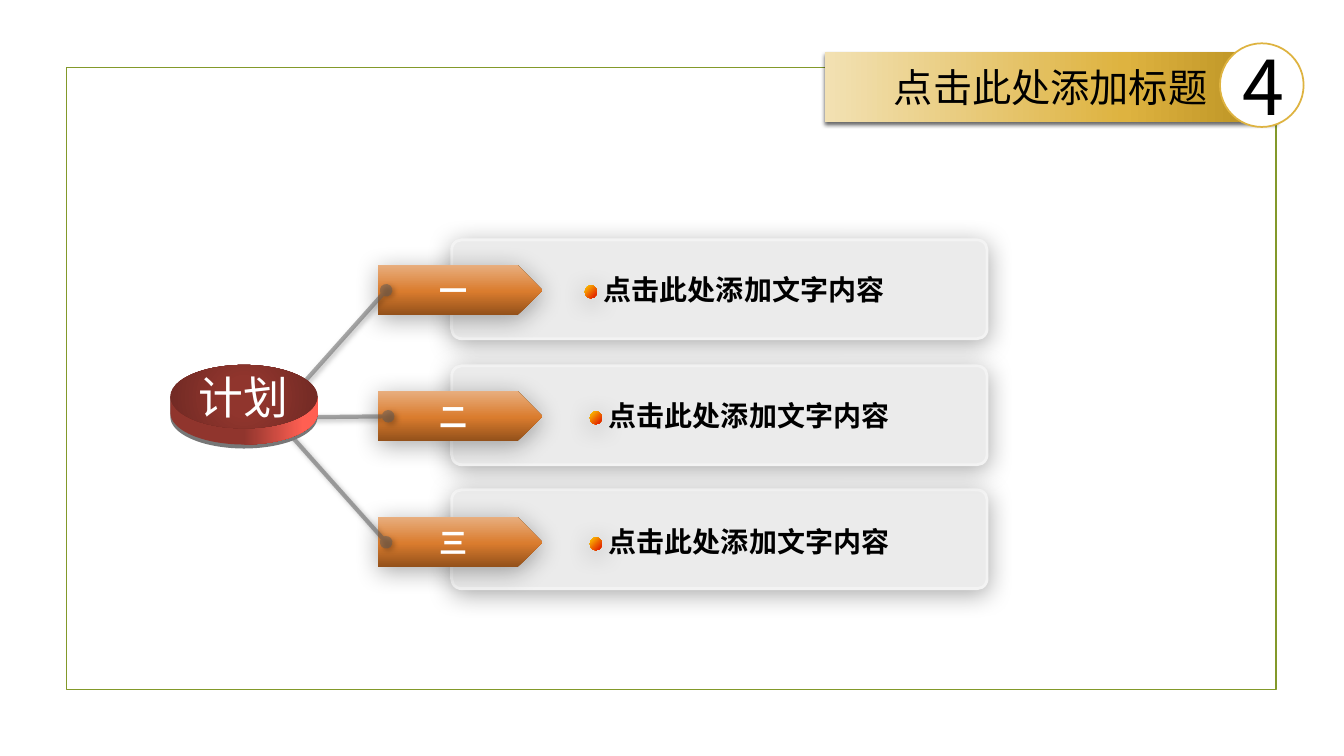
from math import cos, pi, sin

from lxml import etree
from pptx import Presentation
from pptx.dml.color import RGBColor
from pptx.enum.shapes import MSO_CONNECTOR, MSO_SHAPE
from pptx.enum.text import MSO_ANCHOR, PP_ALIGN
from pptx.oxml.ns import qn
from pptx.util import Inches, Pt

RECTANGLE = MSO_SHAPE.RECTANGLE
ROUNDED = MSO_SHAPE.ROUNDED_RECTANGLE
PENTAGON = MSO_SHAPE.PENTAGON
OVAL = MSO_SHAPE.OVAL
STRAIGHT = MSO_CONNECTOR.STRAIGHT
MIDDLE = MSO_ANCHOR.MIDDLE
TOP = MSO_ANCHOR.TOP
LEFT = PP_ALIGN.LEFT
CENTER = PP_ALIGN.CENTER

BLACK = RGBColor(0x00, 0x00, 0x00)
WHITE = RGBColor(0xFF, 0xFF, 0xFF)
OLIVE = RGBColor(0x83, 0x99, 0x2A)
GOLD = RGBColor(0xDE, 0xB3, 0x40)
DARK_GOLD = RGBColor(0xB7, 0x8E, 0x20)
PALE_GOLD = RGBColor(0xF2, 0xE1, 0xB3)
BROWN = RGBColor(0x92, 0x50, 0x1A)
ORANGE = RGBColor(0xDA, 0x7C, 0x2E)
PEACH = RGBColor(0xE8, 0xAE, 0x7E)
YELLOW = RGBColor(0xFF, 0xCF, 0x01)
RED = RGBColor(0xE2, 0x20, 0x00)
MAROON = RGBColor(0x90, 0x35, 0x2D)
DARK_MAROON = RGBColor(0x71, 0x2A, 0x24)
CORAL = RGBColor(0xFF, 0x5F, 0x52)
CARD_GRAY = RGBColor(0xEB, 0xEB, 0xEB)
EDGE_GRAY = RGBColor(0xF3, 0xF3, 0xF3)
LINE_GRAY = RGBColor(0x59, 0x59, 0x59)
BASE_GRAY = RGBColor(0x77, 0x77, 0x77)

FONT = "Noto Sans CJK SC"
NUMBER_FONT = "Noto Sans CJK JP"
SOFT_SHADOW = (33, 17.8, 3, 87)
LINE_SHADOW = (50, 4, 2, 45)
BAR_SHADOW = (60, 3, 2, 90)
TAG_GRADIENT = ([(0, BROWN), (48, ORANGE), (100, PEACH)], 270)
DOT_GRADIENT = ([(0, YELLOW), (90, RED)], 45)
BAR_GRADIENT = ([(0, DARK_GOLD), (34, GOLD), (100, PALE_GOLD)], 180)
SIDE_GRADIENT = ([(0, MAROON), (50, MAROON), (90, CORAL)], 0)
LID_GRADIENT = ([(0, MAROON), (23, MAROON), (97, DARK_MAROON)], None)


def add_child(parent, tag, **attributes):
    """Append a drawing element and return it."""
    child = etree.SubElement(parent, qn(tag))
    for name, value in attributes.items():
        child.set(name, str(value))
    return child


def add_shadow(properties, opacity, blur, distance, angle):
    """Put an outer black shadow into shape properties."""
    effects = properties.find(qn("a:effectLst"))
    if effects is None:
        effects = add_child(properties, "a:effectLst")
    shadow = add_child(effects, "a:outerShdw", blurRad=Pt(blur), dist=Pt(distance),
                       dir=angle * 60000, algn="ctr", rotWithShape=0)
    color = add_child(shadow, "a:srgbClr", val=BLACK)
    add_child(color, "a:alpha", val=opacity * 1000)


def fill_gradient(shape, stops, angle):
    """Fill with colour stops, linear at an angle or radial without one."""
    shape.fill.gradient()
    gradient = shape._element.spPr.find(qn("a:gradFill"))
    for child in list(gradient):
        gradient.remove(child)
    stop_list = add_child(gradient, "a:gsLst")
    for position, color in stops:
        stop = add_child(stop_list, "a:gs", pos=position * 1000)
        add_child(stop, "a:srgbClr", val=color)
    if angle is None:
        path = add_child(gradient, "a:path", path="circle")
        add_child(path, "a:fillToRect", l=50000, t=50000, r=50000, b=50000)
    else:
        add_child(gradient, "a:lin", ang=angle * 60000, scaled=0)


def style_shape(shape, fill=None, gradient=None, line=None, line_width=1.25, shadow=None):
    """Set fill, outline and shadow of a shape."""
    shape.shadow.inherit = False
    if gradient:
        fill_gradient(shape, *gradient)
    elif fill is not None:
        shape.fill.solid()
        shape.fill.fore_color.rgb = fill
    else:
        shape.fill.background()
    if line is None:
        shape.line.fill.background()
    else:
        shape.line.color.rgb = line
        shape.line.width = Pt(line_width)
    if shadow:
        add_shadow(shape._element.spPr, *shadow)


def add_box(slide, kind, left, top, width, height, **style):
    """Add a styled preset shape."""
    shape = slide.shapes.add_shape(kind, Inches(left), Inches(top), Inches(width), Inches(height))
    style_shape(shape, **style)
    return shape


def write_text(shape, text, size=20, color=BLACK, bold=False, font=FONT,
               align=CENTER, anchor=MIDDLE):
    """Write one formatted paragraph into a shape."""
    frame = shape.text_frame
    frame.word_wrap = True
    frame.vertical_anchor = anchor
    paragraph = frame.paragraphs[0]
    paragraph.alignment = align
    run = paragraph.add_run()
    run.text = text
    run.font.size = Pt(size)
    run.font.bold = bold
    run.font.color.rgb = color
    run.font.name = font
    add_child(run._r.get_or_add_rPr(), "a:ea", typeface=font)


def add_label(slide, left, top, width, height, text, **style):
    """Add a text box with one paragraph."""
    box = slide.shapes.add_textbox(Inches(left), Inches(top), Inches(width), Inches(height))
    write_text(box, text, anchor=TOP, **style)


def add_spoke(slide, start, end):
    """Add a translucent line with round ends and a shadow."""
    spoke = slide.shapes.add_connector(STRAIGHT, *(Inches(value) for value in start + end))
    spoke.line.color.rgb = LINE_GRAY
    spoke.line.width = Pt(3)
    line = spoke._element.spPr.find(qn("a:ln"))
    add_child(line.find(".//" + qn("a:srgbClr")), "a:alpha", val=50000)
    add_child(line, "a:headEnd", type="oval")
    add_child(line, "a:tailEnd", type="oval")
    add_shadow(spoke._element.spPr, *LINE_SHADOW)


def add_disc_side(slide, left, top, width, height, depth, **style):
    """Add the curved side below the lid of a disc."""
    middle_x, middle_y = left + width / 2, top + height / 2
    arc = [(Inches(middle_x - width / 2 * cos(pi * step / 40)),
            Inches(middle_y + depth + height / 2 * sin(pi * step / 40))) for step in range(41)]
    builder = slide.shapes.build_freeform(Inches(left), Inches(middle_y))
    builder.add_line_segments(arc + [(Inches(left + width), Inches(middle_y))], close=True)
    style_shape(builder.convert_to_shape(), **style)


def add_hub(slide):
    """Add the thick disc that names the plan."""
    lid = (1.69, 3.62, 1.46, 0.63)
    add_disc_side(slide, *lid, depth=0.2, fill=BASE_GRAY)
    add_disc_side(slide, *lid, depth=0.16, gradient=SIDE_GRADIENT)
    add_box(slide, OVAL, *lid, gradient=LID_GRADIENT)
    add_label(slide, 1.65, 3.62, 1.53, 0.64, "计划", size=32, color=WHITE)


def add_item(slide, number, top, text_left):
    """Add a numbered tag with its dot and text."""
    tag = add_box(slide, PENTAGON, 3.75, top, 1.63, 0.5, gradient=TAG_GRADIENT,
                  shadow=SOFT_SHADOW)
    write_text(tag, number, color=WHITE, bold=True)
    add_label(slide, text_left, top + 0.02, 3.1, 0.44, "点击此处添加文字内容",
              bold=True, align=LEFT)
    add_box(slide, OVAL, text_left - 0.09, top + 0.2, 0.12, 0.13, gradient=DOT_GRADIENT,
            shadow=SOFT_SHADOW)


def add_header(slide):
    """Add the title bar and its number badge."""
    bar = add_box(slide, RECTANGLE, 8.18, 0.52, 4.48, 0.69, gradient=BAR_GRADIENT,
                  shadow=BAR_SHADOW)
    write_text(bar, "点击此处添加标题", size=28)
    badge = add_box(slide, OVAL, 12.1, 0.43, 0.83, 0.83, fill=WHITE, line=GOLD)
    write_text(badge, "4", size=54, font=NUMBER_FONT)


def main():
    """Build the plan slide and save it."""
    presentation = Presentation()
    presentation.slide_width = Inches(13.33)
    presentation.slide_height = Inches(7.5)
    slide = presentation.slides.add_slide(presentation.slide_layouts[6])
    add_box(slide, RECTANGLE, 0.66, 0.67, 12, 6.17, line=OLIVE)
    for card_top in (4.86, 3.63, 2.38):
        card = add_box(slide, ROUNDED, 4.48, card_top, 5.31, 0.98, fill=CARD_GRAY,
                       line=EDGE_GRAY, line_width=2, shadow=SOFT_SHADOW)
        card.adjustments[0] = 0.1
    for index, (number, text_left) in enumerate([("一", 5.89), ("二", 5.94), ("三", 5.94)]):
        add_item(slide, number, 2.63 + 1.25 * index, text_left)
    for start, end in [((2.84, 3.99), (3.83, 2.88)), ((3, 4.14), (3.85, 4.13)),
                       ((2.84, 4.27), (3.83, 5.38))]:
        add_spoke(slide, start, end)
    add_hub(slide)
    add_header(slide)
    presentation.save("out.pptx")


if __name__ == "__main__":
    main()
